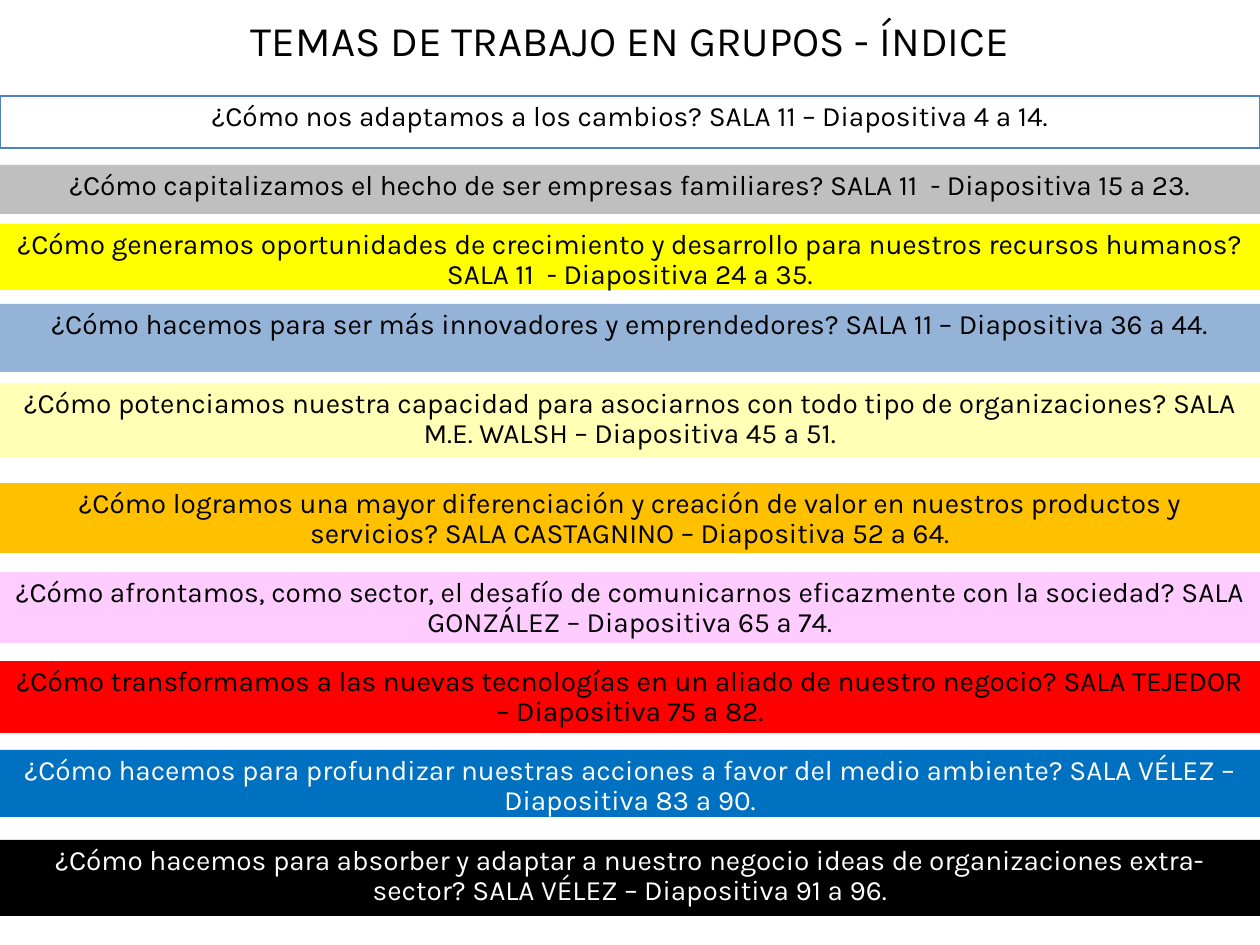
"""Build the index slide of group work topics."""
from lxml import etree
from pptx import Presentation
from pptx import util as u
from pptx.dml.color import RGBColor
from pptx.enum import shapes, text
from pptx.oxml.ns import qn

BLACK = RGBColor(0x00, 0x00, 0x00)
WHITE = RGBColor(0xFF, 0xFF, 0xFF)
GREY = RGBColor(0xBF, 0xBF, 0xBF)
YELLOW = RGBColor(0xFF, 0xFF, 0x00)
SKY = RGBColor(0x95, 0xB3, 0xD7)
CREAM = RGBColor(0xFF, 0xFF, 0x99)
ORANGE = RGBColor(0xFF, 0xC0, 0x00)
PINK = RGBColor(0xFF, 0xCC, 0xFF)
RED = RGBColor(0xFF, 0x00, 0x00)
BLUE = RGBColor(0x00, 0x70, 0xC0)
EDGE = RGBColor(0x4F, 0x81, 0xBD)

FONT = "Karla"
WIDE, HIGH = 1260, 945
TITLE = "TEMAS DE TRABAJO EN GRUPOS - ÍNDICE"
# top, height, fill, ink, topic
BANDS = [
    (96, 52, WHITE, BLACK, "¿Cómo nos adaptamos a los cambios? SALA 11 – Diapositiva 4 a 14."),
    (165, 49, GREY, BLACK, "¿Cómo capitalizamos el hecho de ser empresas familiares? "
     "SALA 11  - Diapositiva 15 a 23."),
    (224, 66, YELLOW, BLACK, "¿Cómo generamos oportunidades de crecimiento y desarrollo para "
     "nuestros recursos humanos? SALA 11  - Diapositiva 24 a 35."),
    (304, 68, SKY, BLACK, "¿Cómo hacemos para ser más innovadores y emprendedores? "
     "SALA 11 – Diapositiva 36 a 44."),
    (383, 74, CREAM, BLACK, "¿Cómo potenciamos nuestra capacidad para asociarnos con todo tipo "
     "de organizaciones? SALA M.E. WALSH – Diapositiva 45 a 51."),
    (483, 70, ORANGE, BLACK, "¿Cómo logramos una mayor diferenciación y creación de valor en "
     "nuestros productos y servicios? SALA CASTAGNINO – Diapositiva 52 a 64."),
    (572, 71, PINK, BLACK, "¿Cómo afrontamos, como sector, el desafío de comunicarnos "
     "eficazmente con la sociedad? SALA GONZÁLEZ – Diapositiva 65 a 74."),
    (661, 72, RED, BLACK, "¿Cómo transformamos a las nuevas tecnologías en un aliado de "
     "nuestro negocio? SALA TEJEDOR – Diapositiva 75 a 82."),
    (750, 67, BLUE, WHITE, "¿Cómo hacemos para profundizar nuestras acciones a favor del medio "
     "ambiente? SALA VÉLEZ – Diapositiva 83 a 90."),
    (840, 76, BLACK, WHITE, "¿Cómo hacemos para absorber y adaptar a nuestro negocio ideas de "
     "organizaciones extra-sector? SALA VÉLEZ – Diapositiva 91 a 96."),
]


def px(n):
    """Turn px into EMU."""
    return u.Emu(round(n * 914400 / 126))


def write(shape, words, size, ink, anchor):
    """Put one centred paragraph into a shape."""
    frame = shape.text_frame
    frame.word_wrap = True
    frame.vertical_anchor = anchor
    para = frame.paragraphs[0]
    para.alignment = text.PP_ALIGN.CENTER
    run = para.add_run()
    run.text = words
    run.font.name = FONT
    run.font.size = u.Pt(size)
    run.font.color.rgb = ink
    return para


def band(slide, top, high, fill, ink, topic):
    """Draw one full-width topic band."""
    box = slide.shapes.add_shape(shapes.MSO_SHAPE.RECTANGLE, 0, px(top), px(WIDE), px(high))
    box.shadow.inherit = False
    box.fill.solid()
    box.fill.fore_color.rgb = fill
    if fill == WHITE:
        box.line.color.rgb = EDGE
        box.line.width = u.Pt(0.75)
    else:
        box.line.fill.background()
    if fill == CREAM:
        tint = box.fill._xPr.find(".//" + qn("a:srgbClr"))
        etree.SubElement(tint, qn("a:alpha"), val="72000")
    para = write(box, topic, 16, ink, text.MSO_ANCHOR.TOP)
    para.line_spacing = 0.9
    para.space_before = u.Pt(10)


def main():
    """Make the slide and save it."""
    deck = Presentation()
    deck.slide_width, deck.slide_height = px(WIDE), px(HIGH)
    slide = deck.slides.add_slide(deck.slide_layouts[6])
    head = slide.shapes.add_textbox(0, px(-6), px(WIDE), px(92))
    write(head, TITLE, 24, BLACK, text.MSO_ANCHOR.MIDDLE)
    for row in BANDS:
        band(slide, *row)
    deck.save("out.pptx")


if __name__ == "__main__":
    main()
